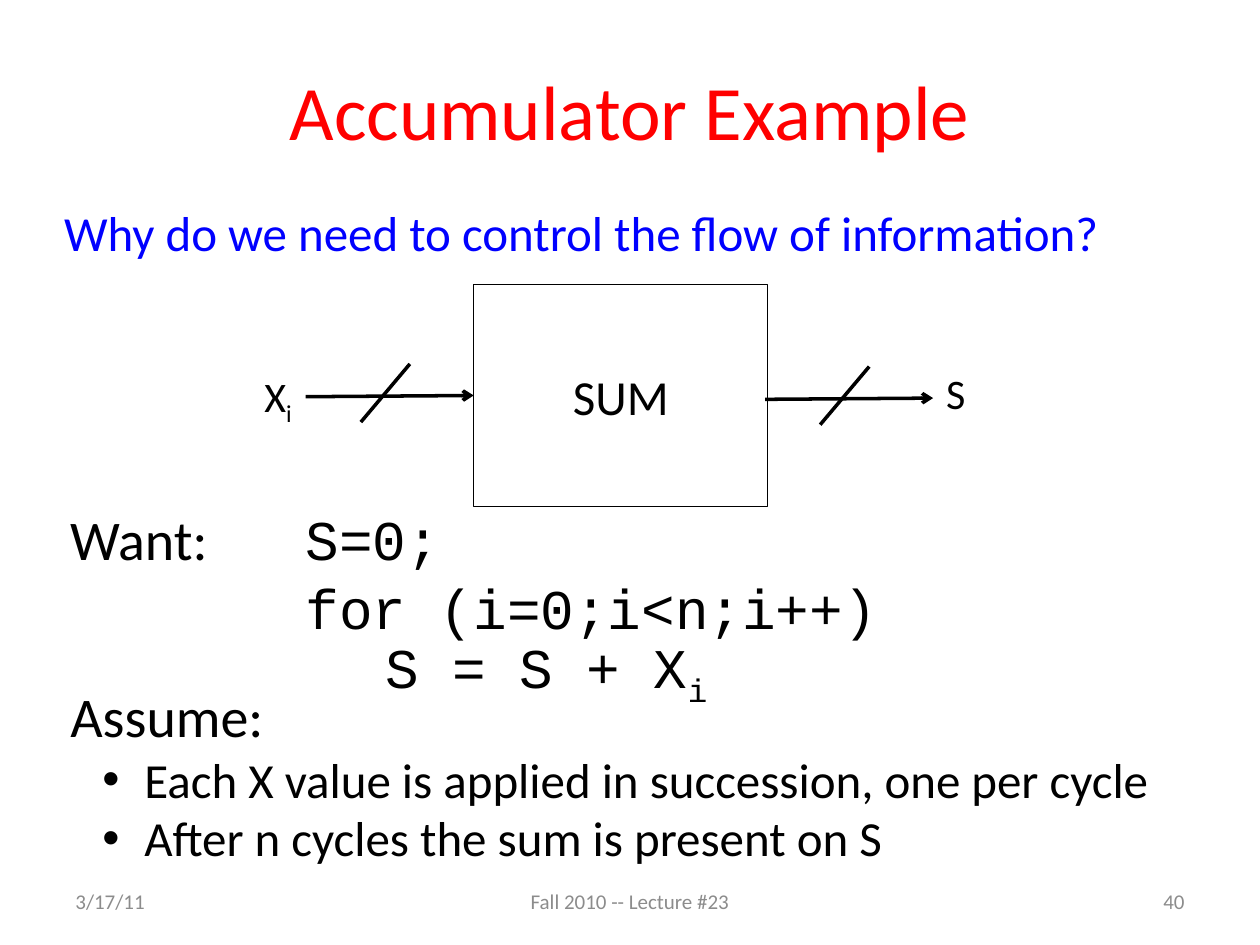
import pptx
import pptx.util
import pptx.dml.color
import pptx.enum.shapes
import pptx.enum.text
import pptx.oxml
import pptx.oxml.ns

Pt = pptx.util.Pt
RGBColor = pptx.dml.color.RGBColor
ALIGN = pptx.enum.text.PP_ALIGN
ANCHOR = pptx.enum.text.MSO_ANCHOR

BLACK = RGBColor(0x00, 0x00, 0x00)
WHITE = RGBColor(0xFF, 0xFF, 0xFF)
RED = RGBColor(0xFF, 0x00, 0x00)
BLUE = RGBColor(0x00, 0x00, 0xFF)
GRAY = RGBColor(0x8C, 0x8C, 0x8C)

BODY_FONT = "Calibri"
CODE_FONT = "Courier New"


def add_xml(parent, tag, **attributes):
    element = pptx.oxml.parse_xml(f"<{tag} {pptx.oxml.ns.nsdecls('a')}/>")
    for name, value in attributes.items():
        element.set(name, value)
    parent.append(element)


def format_run(run, size, color=BLACK, font=BODY_FONT):
    run.font.size = Pt(size)
    run.font.name = font
    run.font.color.rgb = color


def add_subscript(paragraph, text, size, font=BODY_FONT):
    run = paragraph.add_run()
    run.text = text
    format_run(run, size, font=font)
    run.font._element.set("baseline", "-25000")


def set_indent(paragraph, left, first=0):
    properties = paragraph._p.get_or_add_pPr()
    properties.set("marL", str(Pt(left)))
    properties.set("indent", str(Pt(first)))


def place(shape, box):
    shape.left, shape.top, shape.width, shape.height = (Pt(value) for value in box)


def add_label(slide, box, text, size, color=BLACK, align=ALIGN.LEFT,
              anchor=ANCHOR.TOP, wrap=True):
    shape = slide.shapes.add_textbox(*(Pt(value) for value in box))
    frame = shape.text_frame
    frame.text = text
    frame.word_wrap = wrap
    frame.vertical_anchor = anchor
    paragraph = frame.paragraphs[0]
    paragraph.alignment = align
    format_run(paragraph.runs[0], size, color)
    return paragraph


def add_line(slide, start, end, arrow=False):
    line = slide.shapes.add_connector(
        pptx.enum.shapes.MSO_CONNECTOR.STRAIGHT, *(Pt(value) for value in start + end))
    line.line.color.rgb = BLACK
    line.line.width = Pt(2)
    if arrow:
        add_xml(line.line._get_or_add_ln(), "a:tailEnd", type="arrow")
    add_xml(line._element.spPr, "a:effectLst")


def add_title(slide, box):
    title = slide.shapes.title
    place(title, box)
    title.text_frame.text = "Accumulator Example"
    title.text_frame.vertical_anchor = ANCHOR.MIDDLE
    paragraph = title.text_frame.paragraphs[0]
    paragraph.alignment = ALIGN.CENTER
    paragraph.line_spacing = 0.87
    format_run(paragraph.runs[0], 44, RED)


def add_diagram(slide, box):
    left, top, width, height = box
    # Adder block
    block_left, block_width = left + 126.7, 168
    block = slide.shapes.add_shape(pptx.enum.shapes.MSO_SHAPE.RECTANGLE,
                                   Pt(block_left), Pt(top), Pt(block_width), Pt(height))
    block.shadow.inherit = False
    block.fill.solid()
    block.fill.fore_color.rgb = WHITE
    block.line.color.rgb = BLACK
    block.line.width = Pt(0.75)
    block.text_frame.text = "SUM"
    block.text_frame.vertical_anchor = ANCHOR.MIDDLE
    paragraph = block.text_frame.paragraphs[0]
    paragraph.alignment = ALIGN.CENTER
    format_run(paragraph.runs[0], 28)
    # Input and output buses, each crossed by a slash
    bus_length = 96
    for bus_left, bus_top in ((block_left - bus_length, top + 64),
                              (block_left + block_width - 1.5, top + 65.5)):
        add_line(slide, (bus_left, bus_top), (bus_left + bus_length, bus_top - 0.7), True)
        add_line(slide, (bus_left + 31.5, bus_top + 14.5), (bus_left + 59.5, bus_top - 18.7))
    # Signal names
    input_name = add_label(slide, (left, top + 45.3, 31, 36.7), "X", 24, wrap=False)
    add_subscript(input_name, "i", 24)
    add_label(slide, (left + 389.5, top + 44, 26, 36.7), "S", 24, wrap=False)


def add_code(slide, box):
    code_indent = 134.5
    first = add_label(slide, box, "Want:\t", 32)
    run = first.add_run()
    run.text = "S=0;"
    format_run(run, 32, font=CODE_FONT)
    set_indent(first, code_indent, -code_indent)
    frame = slide.shapes[-1].text_frame
    for text, indent in (("for (i=0;i<n;i++)", code_indent), ("S = S + X", 180)):
        paragraph = frame.add_paragraph()
        paragraph.text = text
        format_run(paragraph.runs[0], 32, font=CODE_FONT)
        set_indent(paragraph, indent)
    add_subscript(paragraph, "i", 32, CODE_FONT)
    for paragraph in frame.paragraphs:
        paragraph.line_spacing = Pt(39)


def add_assumptions(slide, box):
    body = slide.placeholders[1]
    place(body, box)
    frame = body.text_frame
    frame.text = ("Assume:\nEach X value is applied in succession, one per cycle\n"
                  "After n cycles the sum is present on S")
    frame.auto_size = pptx.enum.text.MSO_AUTO_SIZE.NONE
    for index, paragraph in enumerate(frame.paragraphs):
        paragraph.space_before = Pt(0)
        format_run(paragraph.runs[0], 28 if index else 32)
        if index:
            paragraph.level = 1
            set_indent(paragraph, 42.3, -24)
            add_xml(paragraph._p.pPr, "a:buFont", typeface="Arial")
            add_xml(paragraph._p.pPr, "a:buChar", char="•")
        else:
            set_indent(paragraph, 0)
            add_xml(paragraph._p.pPr, "a:buNone")


def add_footer(slide, box):
    left, top, width, height = box
    side, middle = 168, 228
    for text, part_left, part_width, align in (
            ("3/17/11", left, side, ALIGN.LEFT),
            ("Fall 2010 -- Lecture #23", left + (width - middle) / 2, middle, ALIGN.CENTER),
            ("40", left + width - side, side, ALIGN.RIGHT)):
        add_label(slide, (part_left, top, part_width, height), text, 12, GRAY,
                  align, ANCHOR.MIDDLE)


def main():
    presentation = pptx.Presentation()
    presentation.slide_width, presentation.slide_height = Pt(720), Pt(540)
    slide = presentation.slides.add_slide(presentation.slide_layouts[1])
    add_title(slide, (36, 21.6, 648, 90))
    add_label(slide, (29.5, 112.3, 611, 41), "Why do we need to control the flow of information?",
              28, BLUE, wrap=False)
    add_diagram(slide, (144, 162.7, 415.5, 126.7))
    add_code(slide, (33, 284.4, 480, 124))
    add_assumptions(slide, (33, 386, 659, 114.5))
    add_footer(slide, (36, 500.5, 648, 28.8))
    presentation.save("out.pptx")


if __name__ == "__main__":
    main()
